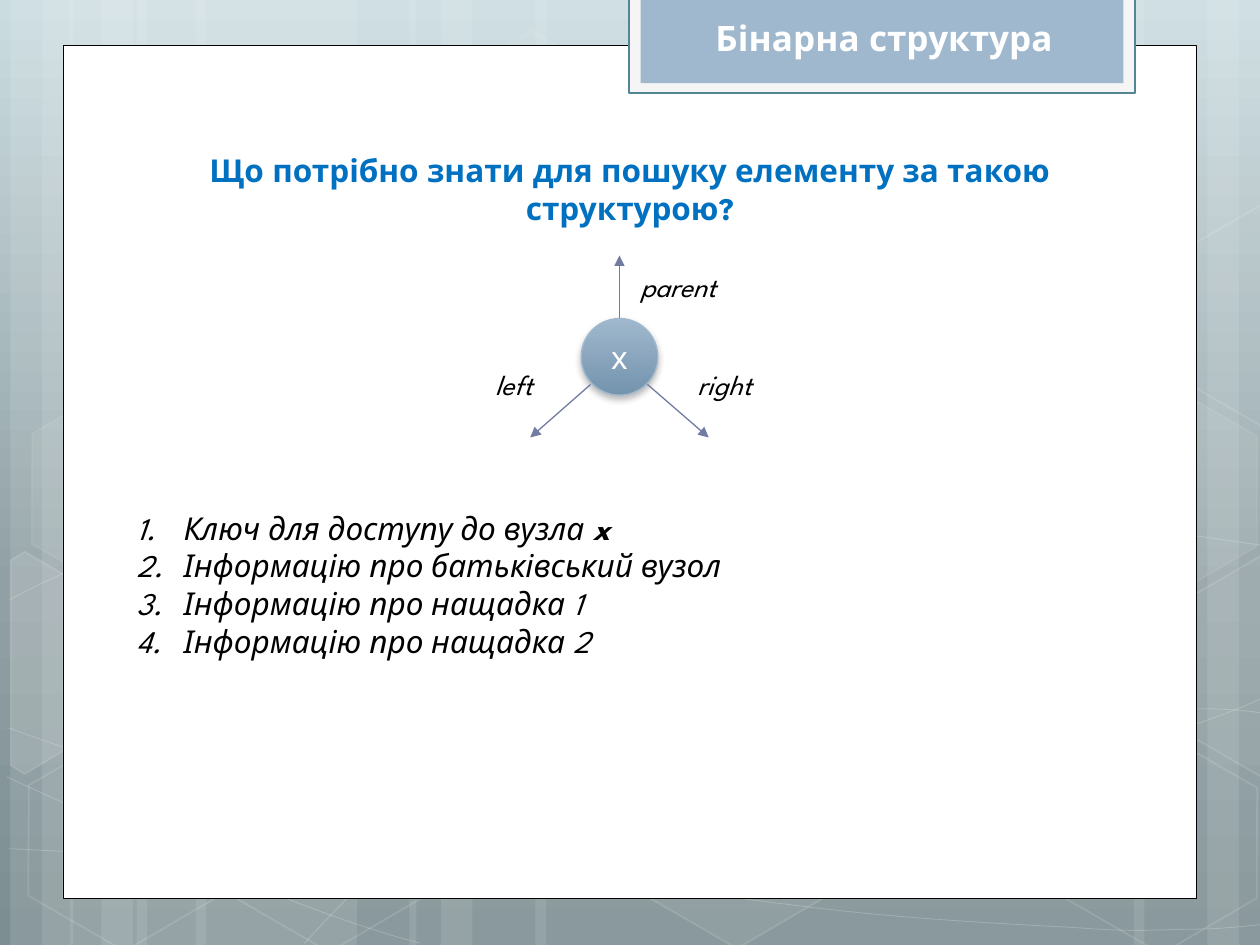
from copy import deepcopy
from math import cos, radians, sin
from typing import NamedTuple, Optional

from lxml.etree import SubElement
from pptx import Presentation
from pptx.dml.color import RGBColor
from pptx.enum.shapes import MSO_CONNECTOR, MSO_SHAPE
from pptx.enum.text import MSO_ANCHOR, MSO_AUTO_SIZE, PP_ALIGN
from pptx.oxml.ns import qn
from pptx.util import Pt

FONT = "League Spartan"
TILT = 30  # degrees, all hexagons
WHITE = RGBColor(0xFF, 0xFF, 0xFF)
BLACK = RGBColor(0x00, 0x00, 0x00)
BLUE = RGBColor(0x00, 0x70, 0xC0)
TAB_FRAME = RGBColor(0xF5, 0xF5, 0xF5)
TAB_LINE = RGBColor(0x52, 0x86, 0x93)
STEEL = RGBColor(0x9F, 0xB8, 0xCD)
STEEL_DARK = RGBColor(0x74, 0x93, 0xAD)
ARROW = RGBColor(0x72, 0x7C, 0xA3)
SKY = [(0, RGBColor(0xCB, 0xDC, 0xE0)), (0.62, RGBColor(0x90, 0xA0, 0xA4)),
       (1, RGBColor(0x7D, 0x8E, 0x92))]


class Box(NamedTuple):
    x: float
    y: float
    w: float
    h: float

    def emu(self):
        return [Pt(v) for v in self]


class Hexagon(NamedTuple):
    x: float
    y: float
    fill: int
    line: int


class CutHexagon(NamedTuple):
    points: list
    center: tuple
    fill: int


class Curve(NamedTuple):
    start: tuple
    segments: list  # six numbers for a Bézier curve, two for a straight line


class Label(NamedTuple):
    text: str
    x: float
    y: float


class Arrow(NamedTuple):
    start: tuple
    end: tuple


STRIPES = [(78, 126), (6, 36), (24, 60), (112, 126), (40, 36), (58, 60),
           (528, 126), (690, 36), (648, 60), (306, 222), (234, 36), (252, 60)]
CURVES = [
    Curve((5, 485), [(44, 487, 83, 489, 137, 488), (191, 487, 258, 486, 330, 479),
                     (402, 472, 504, 458, 570, 444), (636, 431, 703, 409, 725, 397)]),
    Curve((5, 343), [(26, 332, 47, 321, 87, 310), (128, 300, 186, 284, 250, 279),
                     (314, 274, 392, 273, 471, 279), (550, 284, 682, 307, 725, 312)]),
    Curve((4, 444), [(91, 484, 178, 523, 240, 539)]),
    Curve((5, 416), [(27, 424, 50, 432, 92, 444), (134, 454, 197, 472, 257, 485),
                     (317, 497, 392, 510, 452, 517), (512, 525, 576, 528, 614, 530),
                     (652, 533, 662, 531, 680, 531), (699, 531, 712, 529, 725, 528)]),
    Curve((174, 539), [(187, 525, 200, 510, 217, 498), (235, 485, 259, 470, 279, 460),
                       (300, 450, 312, 446, 338, 438), (364, 431, 413, 421, 438, 416),
                       (464, 411, 467, 411, 490, 410), (512, 407, 547, 405, 572, 405),
                       (597, 404, 638, 405, 638, 405), (686, 405),
                       (699, 405, 711, 406, 718, 407), (724, 408, 722, 407, 724, 408)]),
]
HEXAGONS = [Hexagon(240.5, 26, 4, 8), Hexagon(358, 424, 6, 12), Hexagon(8, 425.5, 0, 12),
            Hexagon(10, 224.5, 7, 8), Hexagon(125, 426, 0, 12), Hexagon(542, 326, 10, 12),
            Hexagon(600.5, 427, 0, 12), Hexagon(600.5, 226, 7, 8)]
RIGHT_CUT = [(667, 349), (721, 317.5), (726.5, 321), (726.5, 441), (721.5, 444), (667, 412.5)]
CUT_HEXAGONS = [
    CutHexagon([(6, 320), (14, 315), (69, 347), (68, 410), (14, 442), (6, 437)], (26, 385), 10),
    CutHexagon(RIGHT_CUT, (709, 374.5), 4),
    CutHexagon([(x, y - 200.5) for x, y in RIGHT_CUT], (709, 174), 0),
]
ARROWS = [Arrow((354, 182), (354, 146)), Arrow((337.5, 219.7), (303, 250)),
          Arrow((370, 219.7), (405, 250))]
LABELS = [Label("parent", 345, 150.5), Label("right", 371.5, 206.5), Label("left", 251, 206.5)]
ITEMS = [("Ключ для доступу до вузла ", "x"), ("Інформацію про батьківський вузол",),
         ("Інформацію про нащадка 1",), ("Інформацію про нащадка 2",)]


def set_gradient(fill, stops) -> None:
    """Vertical gradient, first stop at the top."""
    fill.gradient()
    fill.gradient_angle = 270
    last = fill.gradient_stops[-1]._gs
    for _ in stops[2:]:
        last.addnext(deepcopy(last))
    for stop, (position, color) in zip(fill.gradient_stops, stops):
        stop.position = position
        stop.color.rgb = color


def paint(sp, fill: Optional[RGBColor], line: Optional[RGBColor] = None, width: float = 1,
          fill_alpha: int = 100, line_alpha: int = 100) -> None:
    sp.shadow.inherit = False
    parts = ((sp.fill, fill, fill_alpha, "a:solidFill"),
             (sp.line.fill, line, line_alpha, "a:ln/a:solidFill"))
    for target, color, alpha, route in parts:
        if color is None or alpha == 0:
            target.background()
            continue
        target.solid()
        target.fore_color.rgb = color
        if alpha < 100:
            names = "/".join(qn(name) for name in (route + "/a:srgbClr").split("/"))
            SubElement(sp.element.spPr.find(names), qn("a:alpha"), val=str(alpha * 1000))
    if line is not None:
        sp.line.width = Pt(width)


def add_box(s, box: Box, fill, line=None, width=1, fill_alpha=100) -> None:
    sp = s.shapes.add_shape(MSO_SHAPE.RECTANGLE, *box.emu())
    paint(sp, fill, line, width, fill_alpha)


def add_outline(s, points, close: bool):
    emu = [(Pt(x), Pt(y)) for x, y in points]
    builder = s.shapes.build_freeform(*emu[0])
    builder.add_line_segments(emu[1:], close=close)
    return builder.convert_to_shape()


def add_curve(s, curve: Curve):
    """Lay out all points, then join each three of a Bézier segment."""
    points = [curve.start]
    for segment in curve.segments:
        points += zip(segment[::2], segment[1::2])
    sp = add_outline(s, points, False)
    steps = iter(list(sp.element.iter(qn("a:lnTo"))))
    for segment in curve.segments:
        step = next(steps)
        if len(segment) == 6:
            bezier = step.getparent().makeelement(qn("a:cubicBezTo"))
            step.addprevious(bezier)
            for part in (step, next(steps), next(steps)):
                bezier.append(part[0])
                part.getparent().remove(part)
    return sp


def turned_back(points, center) -> list:
    """Points as they lie before the tilt is applied."""
    c, n = cos(radians(TILT)), sin(radians(TILT))
    cx, cy = center
    return [(cx + (x - cx) * c + (y - cy) * n, cy - (x - cx) * n + (y - cy) * c)
            for x, y in points]


def style(p, size, color, align=PP_ALIGN.CENTER, bold=False, italic=False) -> None:
    p.alignment = align
    p.space_before = Pt(0)
    for r in p.runs:
        r.font.name, r.font.size, r.font.color.rgb = FONT, Pt(size), color
        r.font.bold, r.font.italic = bold, italic


def add_text(s, box: Box, text: str, size, color, **look) -> None:
    tf = s.shapes.add_textbox(*box.emu()).text_frame
    tf.word_wrap = True
    tf.text = text
    style(tf.paragraphs[0], size, color, **look)


def add_arrow(s, arrow: Arrow):
    cxn = s.shapes.add_connector(MSO_CONNECTOR.STRAIGHT,
                                 *(Pt(v) for v in arrow.start + arrow.end))
    cxn.line.color.rgb = ARROW
    cxn.line.width = Pt(0.75)
    SubElement(cxn.line._get_or_add_ln(), qn("a:tailEnd"), type="triangle")
    SubElement(cxn.element.spPr, qn("a:effectLst"))
    return cxn


def place(ph, box: Box):
    """Move a placeholder to its place, in front of what is drawn so far."""
    ph.left, ph.top, ph.width, ph.height = box.emu()
    ph.element.getparent().append(ph.element)
    tf = ph.text_frame
    tf.auto_size = MSO_AUTO_SIZE.NONE
    tf.vertical_anchor = MSO_ANCHOR.TOP
    return tf


def draw_backdrop(s) -> None:
    set_gradient(s.background.fill, SKY)
    for x, w in STRIPES:
        add_box(s, Box(x, 0, w, 540), WHITE, fill_alpha=10)
    for curve in CURVES:
        paint(add_curve(s, curve), None, WHITE, 0.5, line_alpha=20)
    for hexagon in HEXAGONS:
        sp = s.shapes.add_shape(MSO_SHAPE.HEXAGON, *Box(hexagon.x, hexagon.y, 126, 109.5).emu())
        sp.rotation = TILT
        sp.adjustments[0], sp.adjustments[1] = 0.285, 1.155
        paint(sp, WHITE, WHITE, 1, hexagon.fill, hexagon.line)
    for cut in CUT_HEXAGONS:
        sp = add_outline(s, turned_back(cut.points, cut.center), True)
        sp.rotation = TILT
        paint(sp, WHITE, WHITE, 1, cut.fill, 12)


def draw_node(s):
    node = s.shapes.add_shape(MSO_SHAPE.OVAL, *Box(332.1, 182, 43.8, 43.8).emu())
    paint(node, STEEL, STEEL, 0.75)
    set_gradient(node.fill, [(0, STEEL), (1, STEEL_DARK)])
    shadow = SubElement(node.element.spPr.find(qn("a:effectLst")), qn("a:outerShdw"),
                        blurRad=str(Pt(4)), dist=str(Pt(2)), dir="5400000", rotWithShape="0")
    SubElement(SubElement(shadow, qn("a:srgbClr"), val=str(BLACK)), qn("a:alpha"), val="28000")
    tf = node.text_frame
    tf.text = "х"
    tf.vertical_anchor = MSO_ANCHOR.MIDDLE
    style(tf.paragraphs[0], 18, WHITE)
    return node


def fill_list(tf) -> None:
    for i, texts in enumerate(ITEMS):
        p = tf.add_paragraph() if i else tf.paragraphs[0]
        pPr = p._p.get_or_add_pPr()
        pPr.set("marL", str(Pt(27)))
        pPr.set("indent", str(-Pt(27)))
        for text in texts:
            p.add_run().text = text
        style(p, 18, BLACK, PP_ALIGN.JUSTIFY, italic=True)
        SubElement(pPr, qn("a:buFont"), typeface="+mj-lt")
        SubElement(pPr, qn("a:buAutoNum"), type="arabicPeriod")
    tf.paragraphs[0].runs[1].font.bold = True


def main() -> None:
    prs = Presentation()
    prs.slide_width, prs.slide_height = Pt(720), Pt(540)
    s = prs.slides.add_slide(prs.slide_layouts[1])
    title, body = s.placeholders
    draw_backdrop(s)
    # White page and title tab
    add_box(s, Box(36, 26, 648, 487.2), WHITE, BLACK, 0.5)
    add_box(s, Box(359.2, -1.5, 289.5, 54.5), TAB_FRAME, TAB_LINE, 1.25)
    add_box(s, Box(366, -1.5, 276, 49), STEEL)
    tf = place(title, Box(400.2, 6, 210, 32))
    tf.word_wrap = False
    tf.text = "Бінарна структура"
    style(tf.paragraphs[0], 20, WHITE, bold=True)
    # Question and numbered answers
    add_text(s, Box(59.5, 83, 601, 51), "Що потрібно знати для пошуку елементу за такою структурою?",
             18, BLUE, bold=True)
    fill_list(place(body, Box(70.7, 287, 402.5, 94)))
    # Node with its three links
    node = draw_node(s)
    cxns = [add_arrow(s, arrow) for arrow in ARROWS]
    cxns[0].begin_connect(node, 0)
    for label in LABELS:
        add_text(s, Box(label.x, label.y, 85, 27), label.text, 16, BLACK, italic=True)
    prs.save("out.pptx")


if __name__ == "__main__":
    main()
